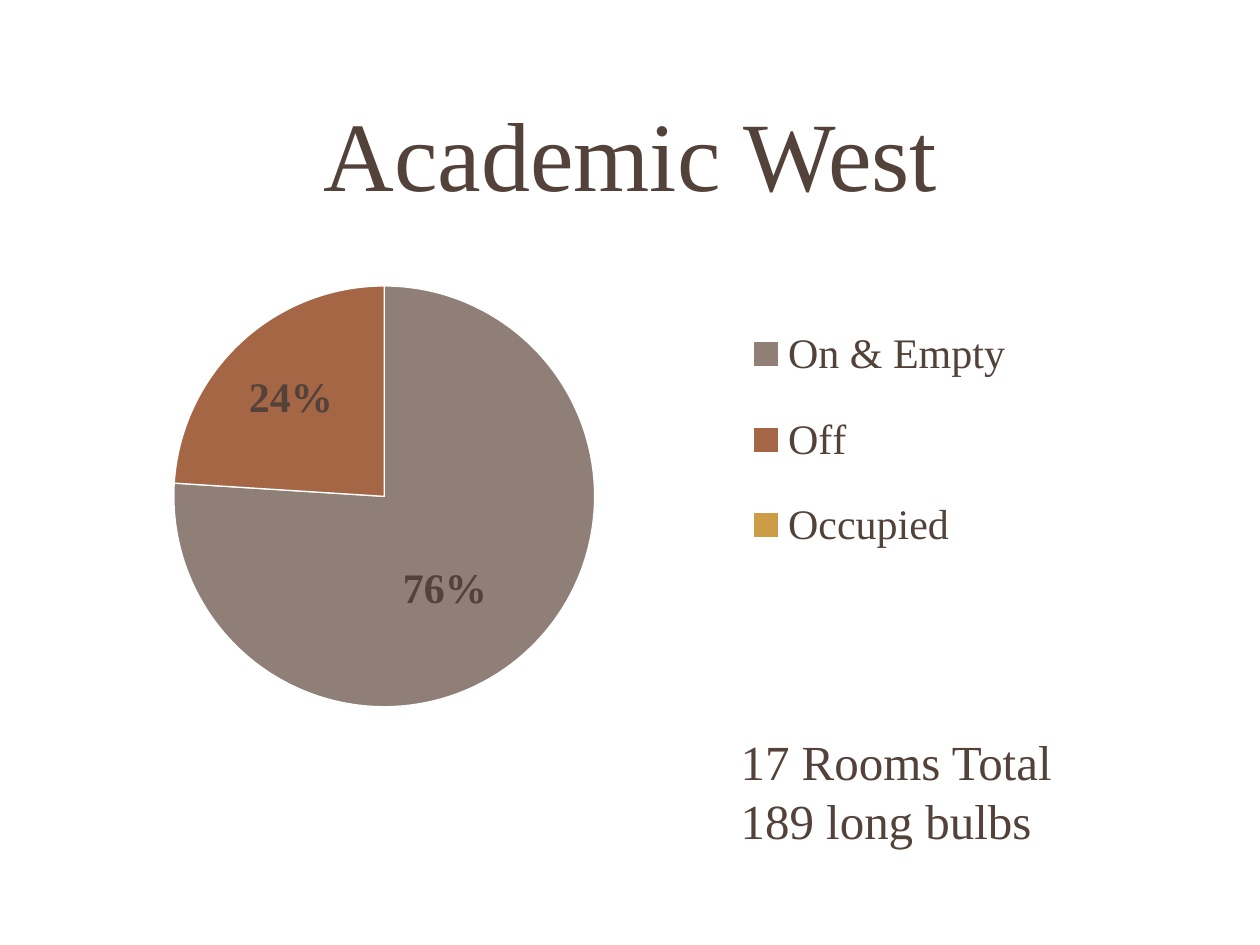
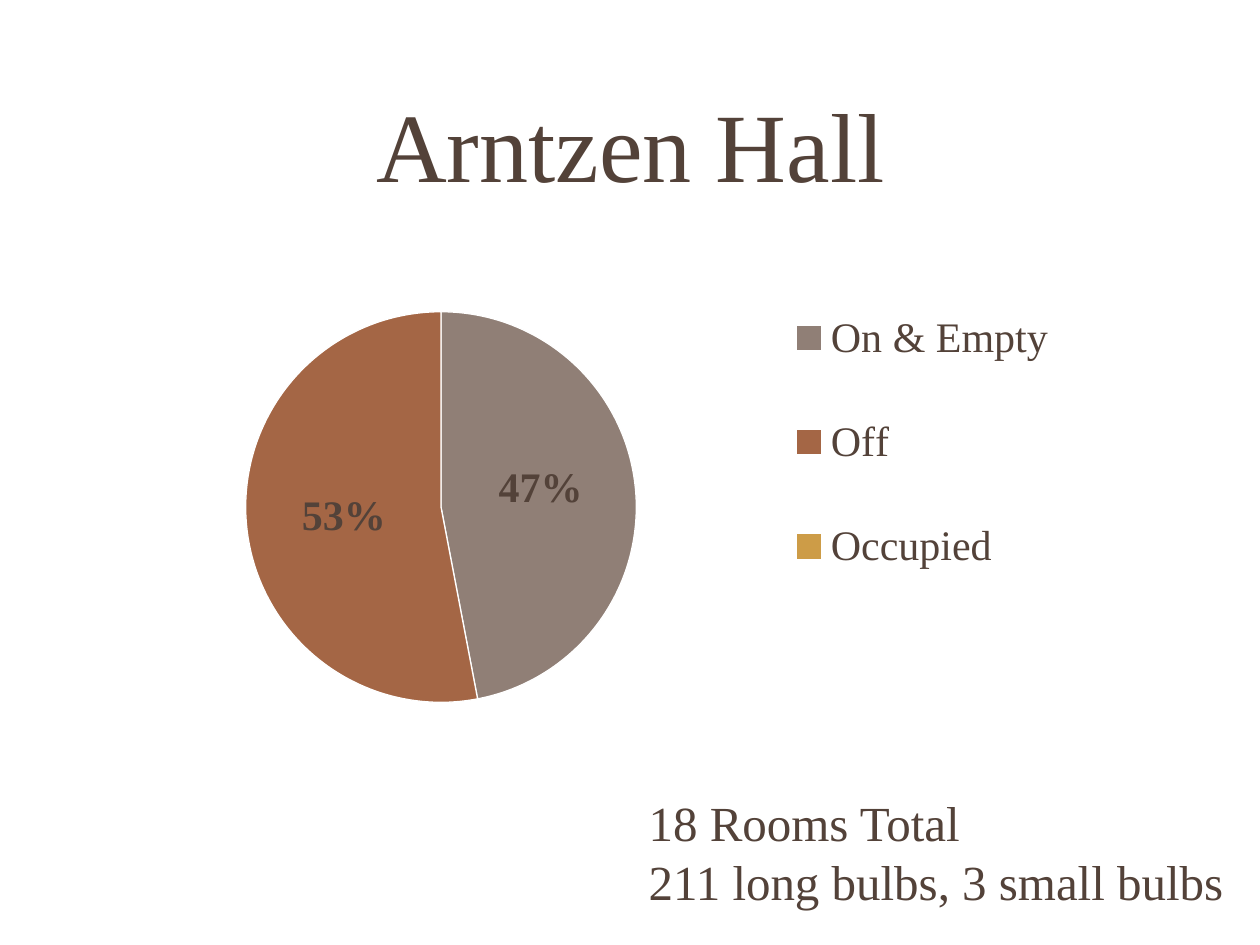
"""Build two slides that chart the lighting survey of each campus building."""
import dataclasses

import pptx
import pptx.chart.data
import pptx.dml.color
import pptx.enum.chart
import pptx.enum.text
import pptx.oxml
import pptx.oxml.ns
import pptx.util

Inches = pptx.util.Inches
qn = pptx.oxml.ns.qn
STATES = ("On & Empty", "Off", "Occupied")
TITLE_ONLY = 5


@dataclasses.dataclass(frozen=True)
class Theme:
    font: str = "Times New Roman"
    ink: str = "534239"
    paper: str = "FFFFFF"
    slices: tuple = ("907F76", "A46645", "CD9C47")
    title_size: int = 56
    note_size: int = 28
    label_size: int = 24
    chart_size: int = 18


@dataclasses.dataclass(frozen=True)
class Building:
    name: str
    title_top: float
    shares: tuple
    chart_box: tuple
    plot_area: tuple
    legend_box: tuple
    label_shifts: tuple
    note_box: tuple
    notes: tuple


BUILDINGS = (
    Building("Academic West", 0.46, (76, 24, 0),
             (0.55, 1.77, 8.25, 4.61), (0.83, 0.5, 3.34, 3.34),
             (5.83, 2.32, 2.3, 2.34), ((-0.09, 0.13), (-0.17, -0.17)),
             (5.78, 5.76, 3.24, 1.04), ("17 Rooms Total", "189 long bulbs")),
    Building("Arntzen Hall", 0.39, (47, 53, 0),
             (0.88, 1.81, 8.25, 4.57), (1.07, 0.66, 3.1, 3.11),
             (6.17, 2.04, 2.3, 2.94), ((0.02, -0.08), (0, 0)),
             (5.05, 6.24, 4.95, 1.04),
             ("18 Rooms Total", "211 long bulbs, 3 small bulbs")),
)


def rgb(code):
    return pptx.dml.color.RGBColor.from_string(code)


def manual_layout(**settings):
    layout = pptx.oxml.parse_xml(
        f'<c:layout xmlns:c="{pptx.oxml.ns.nsdecls("c").split(chr(34))[1]}">'
        '<c:manualLayout/></c:layout>')
    for tag, value in settings.items():
        entry = layout[0].makeelement(qn(f"c:{tag}"), {"val": str(value)})
        layout[0].append(entry)
    return layout


def place(parent, index, left, top, width, height, **target):
    for old in parent.findall(qn("c:layout")):
        parent.remove(old)
    parent.insert(index, manual_layout(
        **target, xMode="edge", yMode="edge",
        x=round(left, 4), y=round(top, 4),
        w=round(width, 4), h=round(height, 4)))


class SurveyDeck:
    def __init__(self, theme):
        self.theme = theme
        self.deck = pptx.Presentation()
        self.deck.slide_width = Inches(10)
        self.deck.slide_height = Inches(7.5)
        self.slide = None

    def style(self, font, size, bold=None):
        font.name = self.theme.font
        font.size = pptx.util.Pt(size)
        font.color.rgb = rgb(self.theme.ink)
        font.bold = bold

    def style_runs(self, frame, size):
        for paragraph in frame.paragraphs:
            for run in paragraph.runs:
                self.style(run.font, size)

    def start(self, name, top):
        self.slide = self.deck.slides.add_slide(
            self.deck.slide_layouts[TITLE_ONLY])
        fill = self.slide.background.fill
        fill.solid()
        fill.fore_color.rgb = rgb(self.theme.paper)
        title = self.slide.shapes.title
        title.left, title.top = Inches(0.88), Inches(top)
        title.width, title.height = Inches(8.25), Inches(1.5)
        frame = title.text_frame
        frame.text = name
        frame.vertical_anchor = pptx.enum.text.MSO_ANCHOR.MIDDLE
        frame.paragraphs[0].alignment = pptx.enum.text.PP_ALIGN.CENTER
        self.style_runs(frame, self.theme.title_size)

    def notes(self, lines, box):
        frame = self.slide.shapes.add_textbox(*map(Inches, box)).text_frame
        frame.word_wrap = True
        frame.text = "\n".join(lines)
        self.style_runs(frame, self.theme.note_size)

    def pie(self, building):
        survey = pptx.chart.data.CategoryChartData()
        survey.categories = STATES
        survey.add_series("Series 1", building.shares)
        chart = self.slide.shapes.add_chart(
            pptx.enum.chart.XL_CHART_TYPE.PIE,
            *map(Inches, building.chart_box), survey).chart
        chart.has_title = False
        self.style(chart.font, self.theme.chart_size)
        chart.plots[0].vary_by_categories = True
        shares = chart.plots[0].series[0]
        for index, color in enumerate(self.theme.slices):
            face = shares.points[index].format
            face.fill.solid()
            face.fill.fore_color.rgb = rgb(color)
            face.line.color.rgb = rgb(self.theme.paper)
            face.line.width = pptx.util.Pt(0.75)
        self.legend(chart, building)
        self.percentages(shares, building)
        left, top, width, height = building.plot_area
        _, _, chart_width, chart_height = building.chart_box
        place(chart._chartSpace.chart.plotArea, 0,
              left / chart_width, top / chart_height,
              width / chart_width, height / chart_height,
              layoutTarget="inner")

    def legend(self, chart, building):
        chart.has_legend = True
        legend = chart.legend
        legend.position = pptx.enum.chart.XL_LEGEND_POSITION.TOP
        legend.include_in_layout = False
        self.style(legend.font, self.theme.label_size)
        left, top, width, height = building.legend_box
        chart_left, chart_top, chart_width, chart_height = building.chart_box
        place(legend._element, 1,
              (left - chart_left) / chart_width,
              (top - chart_top) / chart_height,
              width / chart_width, height / chart_height)

    def percentages(self, shares, building):
        labels = shares.data_labels
        labels.show_percentage = True
        labels.show_value = False
        self.style(labels.font, self.theme.label_size, bold=True)
        _, _, chart_width, chart_height = building.chart_box
        for index in range(len(STATES)):
            label = shares.points[index].data_label
            label.position = pptx.enum.chart.XL_LABEL_POSITION.CENTER
            self.style(label.font, self.theme.label_size, bold=True)
            entry = shares._element.xpath(
                f"c:dLbls/c:dLbl[c:idx/@val='{index}']")[0]
            if building.shares[index]:
                across, down = building.label_shifts[index]
                entry.insert(1, manual_layout(
                    x=round(across / chart_width, 4),
                    y=round(down / chart_height, 4)))
                entry.find(qn("c:showVal")).set("val", "0")
                entry.find(qn("c:showPercent")).set("val", "1")
            else:
                for part in list(entry)[1:]:
                    entry.remove(part)
                entry.append(entry.makeelement(qn("c:delete"), {"val": "1"}))


def main():
    survey = SurveyDeck(Theme())
    for building in BUILDINGS:
        survey.start(building.name, building.title_top)
        survey.pie(building)
        survey.notes(building.notes, building.note_box)
    survey.deck.save("out.pptx")


if __name__ == "__main__":
    main()
